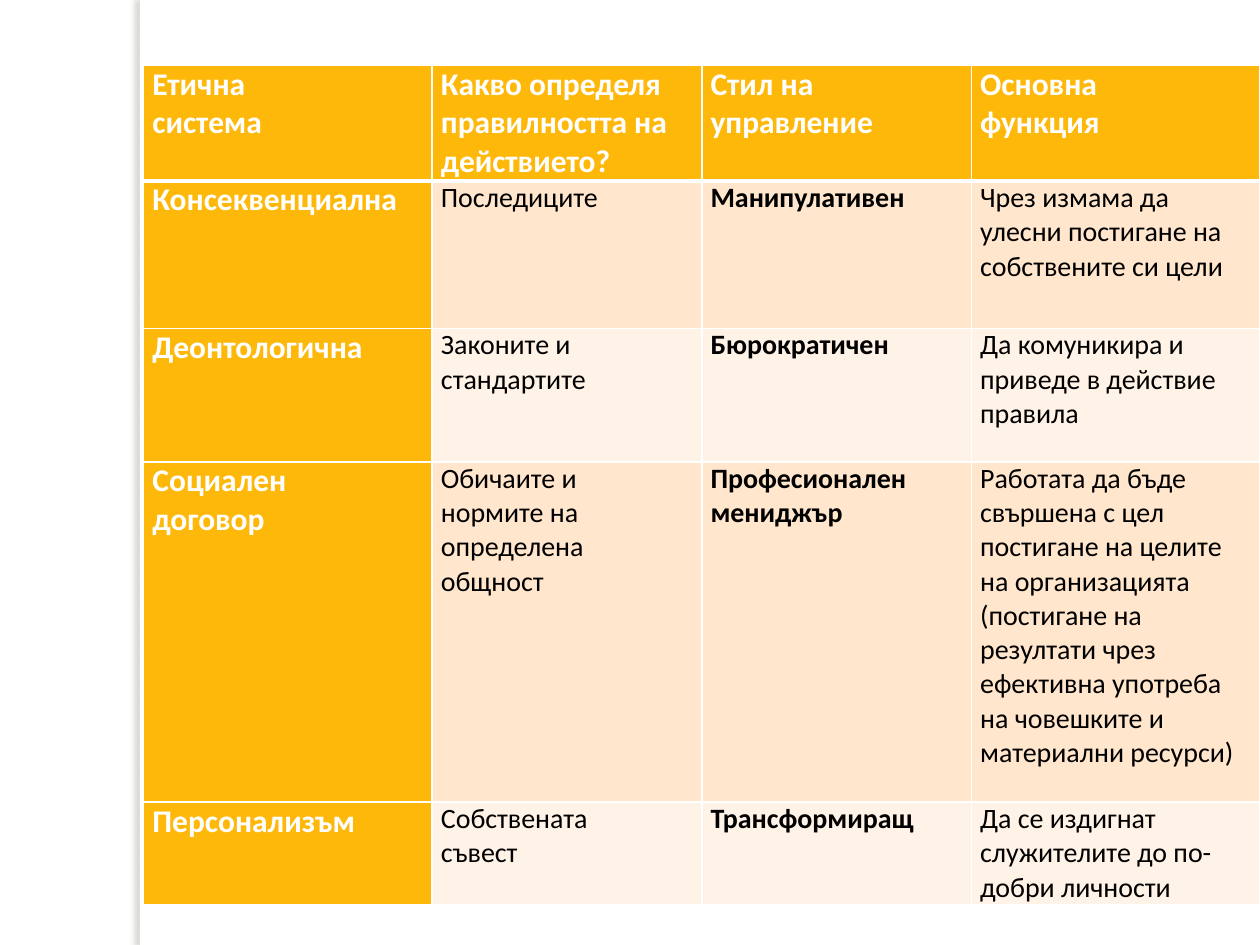
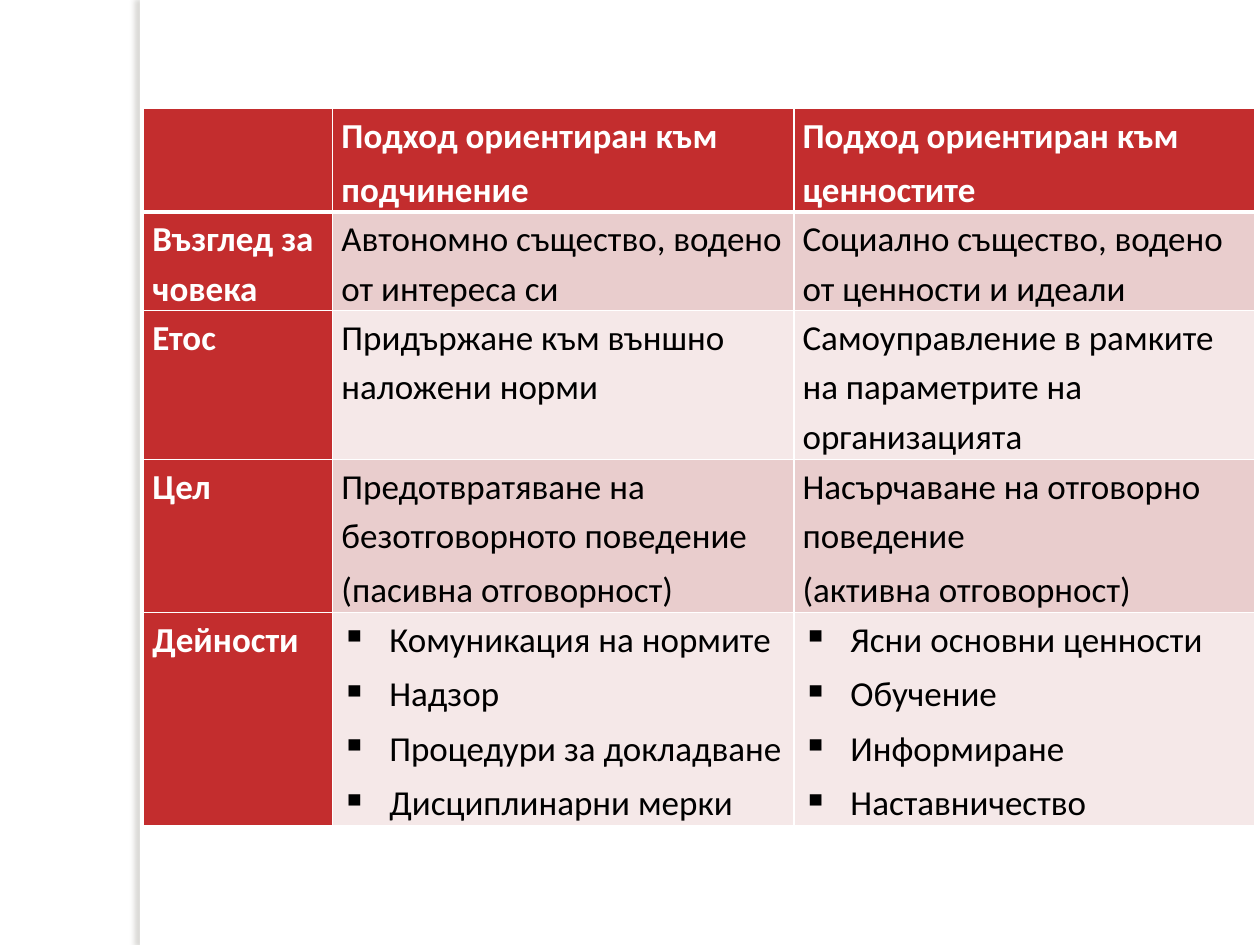
from lxml import etree
from pptx import Presentation
from pptx.dml.color import RGBColor
from pptx.enum.shapes import MSO_SHAPE
from pptx.enum.text import PP_ALIGN
from pptx.oxml import parse_xml
from pptx.oxml.ns import nsdecls, qn
from pptx.util import Inches, Pt

RECTANGLE = MSO_SHAPE.RECTANGLE
LEFT, JUSTIFY = PP_ALIGN.LEFT, PP_ALIGN.JUSTIFY

WHITE = RGBColor(0xFF, 0xFF, 0xFF)
BLACK = RGBColor(0x00, 0x00, 0x00)
AMBER = RGBColor(0xFE, 0xB8, 0x0A)
PEACH = RGBColor(0xFF, 0xE6, 0xCC)
PALE_PEACH = RGBColor(0xFF, 0xF3, 0xE7)
RED = RGBColor(0xC3, 0x2D, 0x2E)
ROSE = RGBColor(0xE9, 0xCD, 0xCD)
PALE_ROSE = RGBColor(0xF5, 0xE8, 0xE8)

FONT = "Calibri"
BULLET = "▪"
TABLE_LEFT = 1.14
CELL_MARGINS = {
    "margin_left": Inches(0.07), "margin_right": Inches(0.07),
    "margin_top": 0, "margin_bottom": 0,
}

# Content: a line break starts a new paragraph
ETHICAL_SYSTEMS = {
    "top": 0.52,
    "columns": [2.29, 2.14, 2.14, 2.29],
    "heights": [0.91, 1.17, 1.06, 2.7, 0.81],
    "accent": AMBER,
    "bands": [PEACH, PALE_PEACH],
    "label_size": 18,
    "body_size": 16,
    "bold_column": 2,
    "header_align": LEFT,
    "paragraph": {},
    "rows": [
        ["Етична\nсистема", "Какво определя правилността на действието?",
         "Стил на\nуправление", "Основна\nфункция"],
        ["Консеквенциална", "Последиците", "Манипулативен",
         "Чрез измама да улесни постигане на собствените си цели"],
        ["Деонтологична", "Законите и\nстандартите", "Бюрократичен",
         "Да комуникира и приведе в действие правила"],
        ["Социален\nдоговор", "Обичаите и\nнормите на\nопределена\nобщност",
         "Професионален мениджър",
         "Работата да бъде свършена с цел постигане на целите на "
         "организацията (постигане на резултати чрез ефективна употреба "
         "на човешките и материални ресурси)"],
        ["Персонализъм", "Собствената\nсъвест", "Трансформиращ",
         "Да се издигнат служителите до по-добри личности"],
    ],
}

# A list in a cell is drawn with bullets
APPROACHES = {
    "top": 0.86,
    "columns": [1.5, 3.66, 3.66],
    "heights": [0.82, 0.78, 1.18, 1.21, 1.69],
    "accent": RED,
    "bands": [ROSE, PALE_ROSE],
    "label_size": 20,
    "body_size": 20,
    "bold_column": None,
    "header_align": JUSTIFY,
    "paragraph": {"line_spacing": 1.15, "space_before": Pt(3)},
    "rows": [
        ["", "Подход ориентиран към\nподчинение",
         "Подход ориентиран към\nценностите"],
        ["Възглед за човека", "Автономно същество, водено от интереса си",
         "Социално същество, водено от ценности и идеали"],
        ["Етос", "Придържане към външно наложени норми",
         "Самоуправление в рамките на параметрите на организацията"],
        ["Цел",
         "Предотвратяване на безотговорното поведение\n(пасивна отговорност)",
         "Насърчаване на отговорно поведение\n(активна отговорност)"],
        ["Дейности",
         ["Комуникация на нормите", "Надзор", "Процедури за докладване",
          "Дисциплинарни мерки"],
         ["Ясни основни ценности", "Обучение", "Информиране",
          "Наставничество"]],
    ],
}


def apply(target, values):
    for name, value in values.items():
        setattr(target, name, value)


def add_side_band(slide):
    band = slide.shapes.add_shape(
        RECTANGLE, Inches(1.11), 0, Inches(0.08), Inches(7.5))
    band.fill.solid()
    band.fill.fore_color.rgb = WHITE
    band.line.fill.background()
    band.element.spPr.append(parse_xml(
        f'<a:effectLst {nsdecls("a")}>'
        f'<a:outerShdw blurRad="{Pt(3)}" dist="{Pt(3)}" dir="10800000" '
        'algn="tl" rotWithShape="0"><a:srgbClr val="736F63">'
        '<a:alpha val="25000"/></a:srgbClr></a:outerShdw></a:effectLst>'))


def set_borders(cell, row):
    widths = {"L": 1, "R": 1, "T": 3 if row == 1 else 1,
              "B": 3 if row == 0 else 1}
    properties = cell._tc.get_or_add_tcPr()
    for side, width in widths.items():
        properties.append(parse_xml(
            f'<a:ln{side} {nsdecls("a")} w="{Pt(width)}"><a:solidFill>'
            f'<a:srgbClr val="{WHITE}"/></a:solidFill></a:ln{side}>'))


def add_bullet(paragraph):
    properties = paragraph._p.get_or_add_pPr()
    properties.set("marL", str(Inches(0.38)))
    properties.set("indent", str(-Inches(0.38)))
    etree.SubElement(properties, qn("a:buChar")).set("char", BULLET)


def fill_cell(cell, content, row, column, design):
    is_label = row == 0 or column == 0
    bulleted = isinstance(content, list)
    apply(cell, CELL_MARGINS)
    set_borders(cell, row)
    cell.fill.solid()
    cell.fill.fore_color.rgb = (
        design["accent"] if is_label else design["bands"][(row - 1) % 2])

    cell.text_frame.text = "\n".join(content) if bulleted else content
    for paragraph in cell.text_frame.paragraphs:
        apply(paragraph, design["paragraph"])
        paragraph.alignment = design["header_align"] if row == 0 else LEFT
        if bulleted:
            add_bullet(paragraph)
        for run in paragraph.runs:
            apply(run.font, {
                "name": FONT,
                "size": Pt(design["label_size" if is_label else "body_size"]),
                "bold": is_label or column == design["bold_column"],
            })
            run.font.color.rgb = WHITE if is_label else BLACK


def add_comparison(slide, design):
    rows, columns, heights = (
        design["rows"], design["columns"], design["heights"])
    table = slide.shapes.add_table(
        len(rows), len(columns), Inches(TABLE_LEFT), Inches(design["top"]),
        Inches(sum(columns)), Inches(sum(heights))).table
    apply(table, {"first_row": False, "horz_banding": False})
    for column, width in zip(table.columns, columns):
        column.width = Inches(width)
    for row, height in zip(table.rows, heights):
        row.height = Inches(height)
    for r, contents in enumerate(rows):
        for c, content in enumerate(contents):
            fill_cell(table.cell(r, c), content, r, c, design)


def main():
    deck = Presentation()
    apply(deck, {"slide_width": Inches(10), "slide_height": Inches(7.5)})
    blank_layout = deck.slide_layouts[6]
    for design in (ETHICAL_SYSTEMS, APPROACHES):
        slide = deck.slides.add_slide(blank_layout)
        add_side_band(slide)
        add_comparison(slide, design)
    deck.save("out.pptx")


if __name__ == "__main__":
    main()
